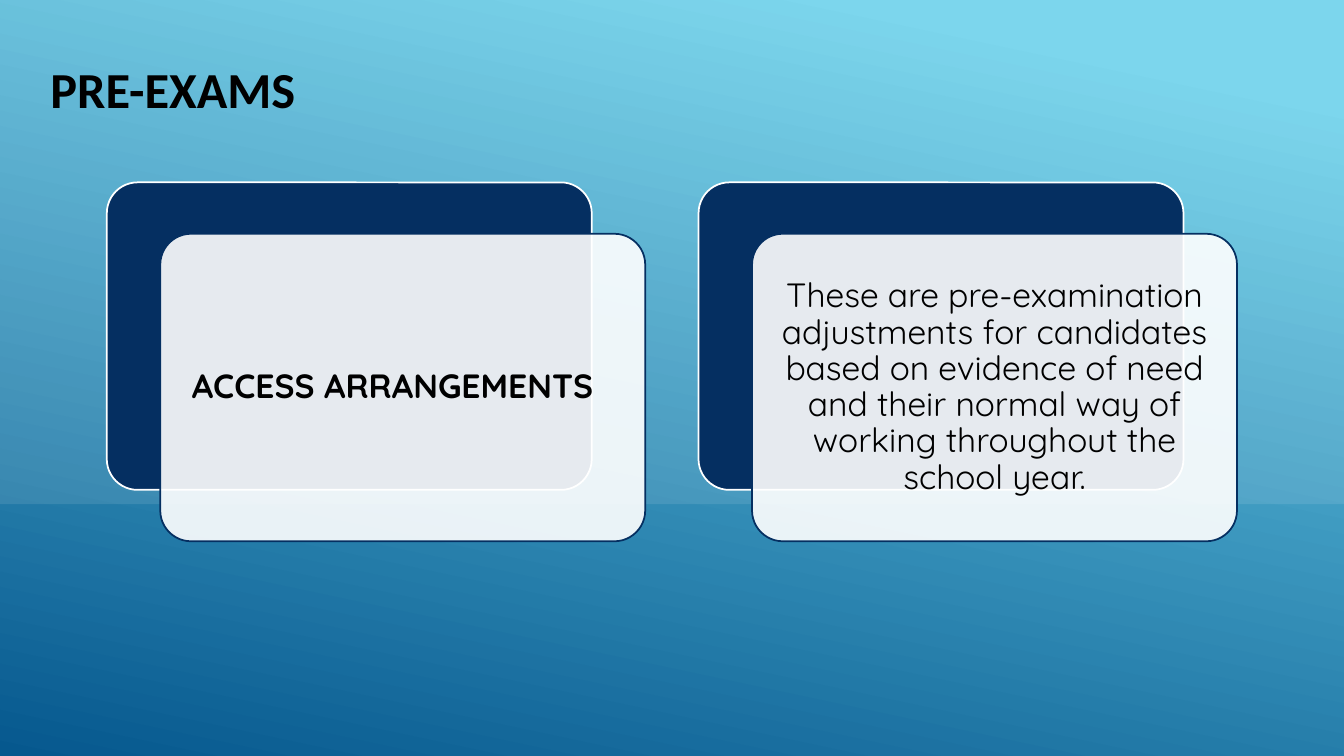
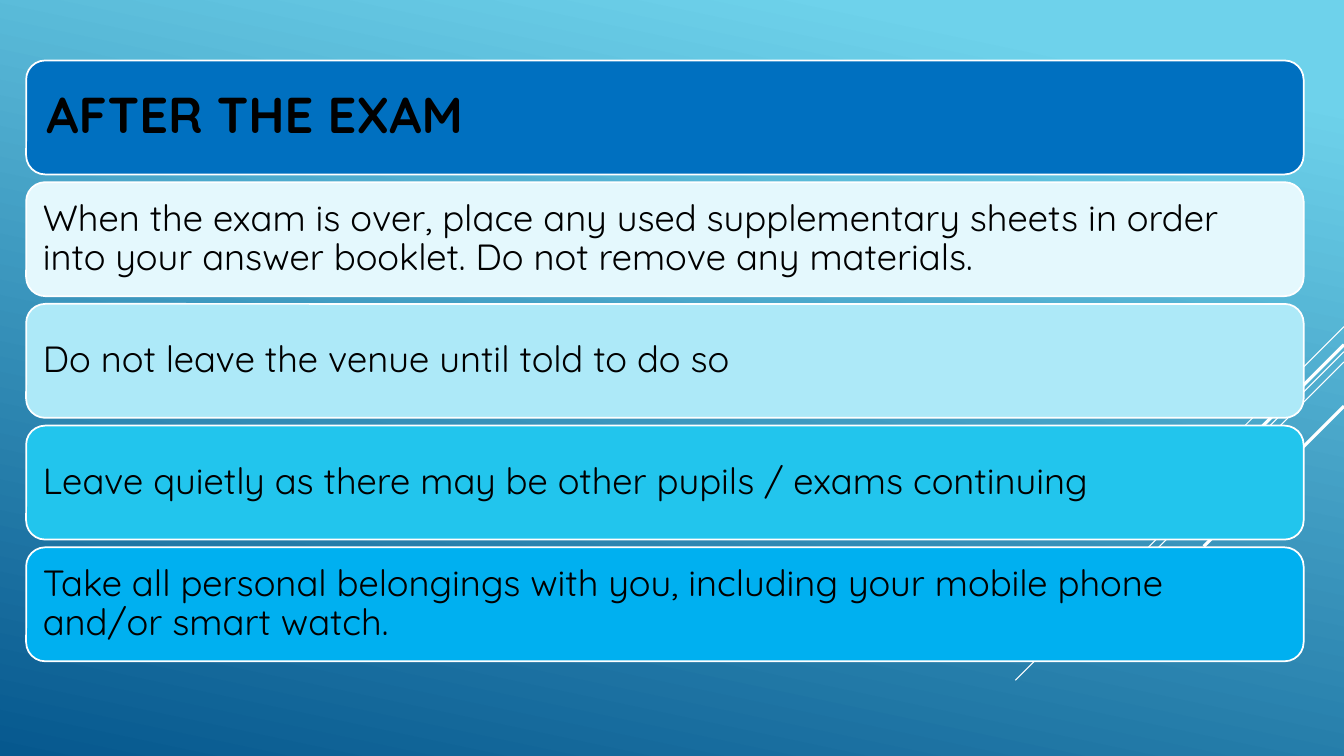
from lxml.etree import SubElement as Sub
from pptx import Presentation
from pptx.dml.color import RGBColor
from pptx.enum.shapes import MSO_CONNECTOR as Conn, MSO_SHAPE as Shape
from pptx.enum.text import MSO_ANCHOR as Anchor, MSO_AUTO_SIZE as Fit, PP_ALIGN as Align
from pptx.oxml.ns import qn
from pptx.util import Inches, Pt

WIDE, HIGH = Inches(13.33), Inches(7.5)
BLACK, WHITE, NAVY = "000000", "FFFFFF", "052F61"
SKY, DEEP = "6ED2EB", "06588E"
FONT = "Quicksand"

# Rays leave the right edge at 45 degrees: top (% of height), run (% of width), weight
RAYS = [(43.2, 7.5, 0.75), (46.53, 24.45, 0.75), (47.87, 15.53, 0.75),
        (45.6, 14.33, 2.25), (53.73, 10.43, 2.25)]

# Cards: text, bold, right inset
CARDS = [
    ("ACCESS ARRANGEMENTS", True, 0.3),
    ("These are pre-examination adjustments for candidates based on evidence "
     "of need and their normal way of working throughout the school year.", False, 0.1),
]

# Bars under the title bar: fill, text
BARS = [
    ("E4F8FD", "When the exam is over, place any used supplementary sheets in order "
               "into your answer booklet. Do not remove any materials."),
    ("ADE9F8", "Do not leave the venue until told to do so"),
    ("22C5ED", "Leave quietly as there may be other pupils / exams continuing"),
    ("00B0F0", "Take all personal belongings with you, including your mobile phone "
               "and/or smart watch."),
]


def rgb(code):
    return RGBColor.from_string(code)


def grid(x, y, w, h):
    """Turn percent of the slide's width and height into lengths."""
    return [int(part * full / 100) for part, full in zip((x, y, w, h), (WIDE, HIGH) * 2)]


def write(shape, text, size, bold=False, font=FONT, align=Align.LEFT,
          anchor=Anchor.MIDDLE, inset=0.1, right=None):
    frame = shape.text_frame
    frame.word_wrap, frame.auto_size = True, Fit.NONE
    frame.vertical_anchor = anchor
    frame.margin_left = frame.margin_top = frame.margin_bottom = Inches(inset)
    frame.margin_right = Inches(inset if right is None else right)
    para = frame.paragraphs[0]
    para.alignment, para.line_spacing = align, 0.9
    run = para.add_run()
    run.text = text
    run.font.name, run.font.size, run.font.bold = font, Pt(size), bold
    run.font.color.rgb = rgb(BLACK)


def panel(slide, box, fill, line=None, kind=Shape.ROUNDED_RECTANGLE, alpha=100):
    shape = slide.shapes.add_shape(kind, *box)
    shape.shadow.inherit = False
    shape.fill.solid()
    shape.fill.fore_color.rgb = rgb(fill)
    if alpha < 100:
        tone = shape.fill._xPr.find(qn("a:solidFill"))[0]
        Sub(tone, qn("a:alpha"), val=str(alpha * 1000))
    if line:
        shape.line.color.rgb = rgb(line)
        shape.line.width = Pt(1.25)
    else:
        shape.line.fill.background()
    return shape


def head(slide, box, text, **style):
    """Fill the title placeholder and bring it to the front."""
    title = slide.shapes.title
    title.left, title.top, title.width, title.height = box
    write(title, text, 36, bold=True, **style)
    slide.shapes._spTree.append(title._element)


def ray(slide, top, run, weight):
    x, y, side, _ = grid(100, top, run, 0)
    line = slide.shapes.add_connector(Conn.STRAIGHT, x, y, x - side, y + side)
    line.line.color.rgb = rgb(WHITE)
    line.line.width = Pt(weight)
    Sub(line._element.spPr, qn("a:effectLst"))


def card(slide, col, text, bold, right):
    x, y, w, h = 7.95 + 44.03 * col, 24.13, 36.08, 40.67
    back = panel(slide, grid(x, y, w, h), NAVY, WHITE)
    front = panel(slide, grid(x + 3.98, y + 6.8, w, h), WHITE, NAVY, alpha=90)
    for shape in (back, front):
        shape.adjustments[0] = 0.1
    write(front, text, 24, bold, align=Align.CENTER, right=right)


def bar(slide, row, fill):
    box = grid(1.95, 8 + 16.1 * row, 95.05, 15.07)
    return panel(slide, box, fill, WHITE)


def paint(master):
    """Give every slide the same gradient."""
    fill = master.background.fill
    fill.gradient()
    fill.gradient_angle = 258
    for stop, code, place in zip(fill.gradient_stops, (SKY, DEEP), (0.1, 1)):
        stop.color.rgb = rgb(code)
        stop.position = place


def before(slide):
    # Pale upper band, then the two cards
    panel(slide, grid(0, 0, 100, 66.67), WHITE, kind=Shape.RECTANGLE, alpha=10)
    for col, parts in enumerate(CARDS):
        card(slide, col, *parts)
    head(slide, grid(3, 7.47, 50.1, 9.47), "PRE-EXAMS", font="Calibri",
         anchor=Anchor.MIDDLE, inset=0.1)


def after(slide):
    # Rays lie behind the stack of bars
    for parts in RAYS:
        ray(slide, *parts)
    bar(slide, 0, "0070C0")
    for row, (fill, text) in enumerate(BARS, 1):
        write(bar(slide, row, fill), text, 26, inset=0.11)
    head(slide, grid(2.33, 8.67, 94.22, 13.6), "AFTER THE EXAM", inset=0.15)


def main():
    deck = Presentation()
    deck.slide_width, deck.slide_height = WIDE, HIGH
    paint(deck.slide_master)
    for build in (before, after):
        build(deck.slides.add_slide(deck.slide_layouts[5]))
    deck.save("out.pptx")


if __name__ == "__main__":
    main()
